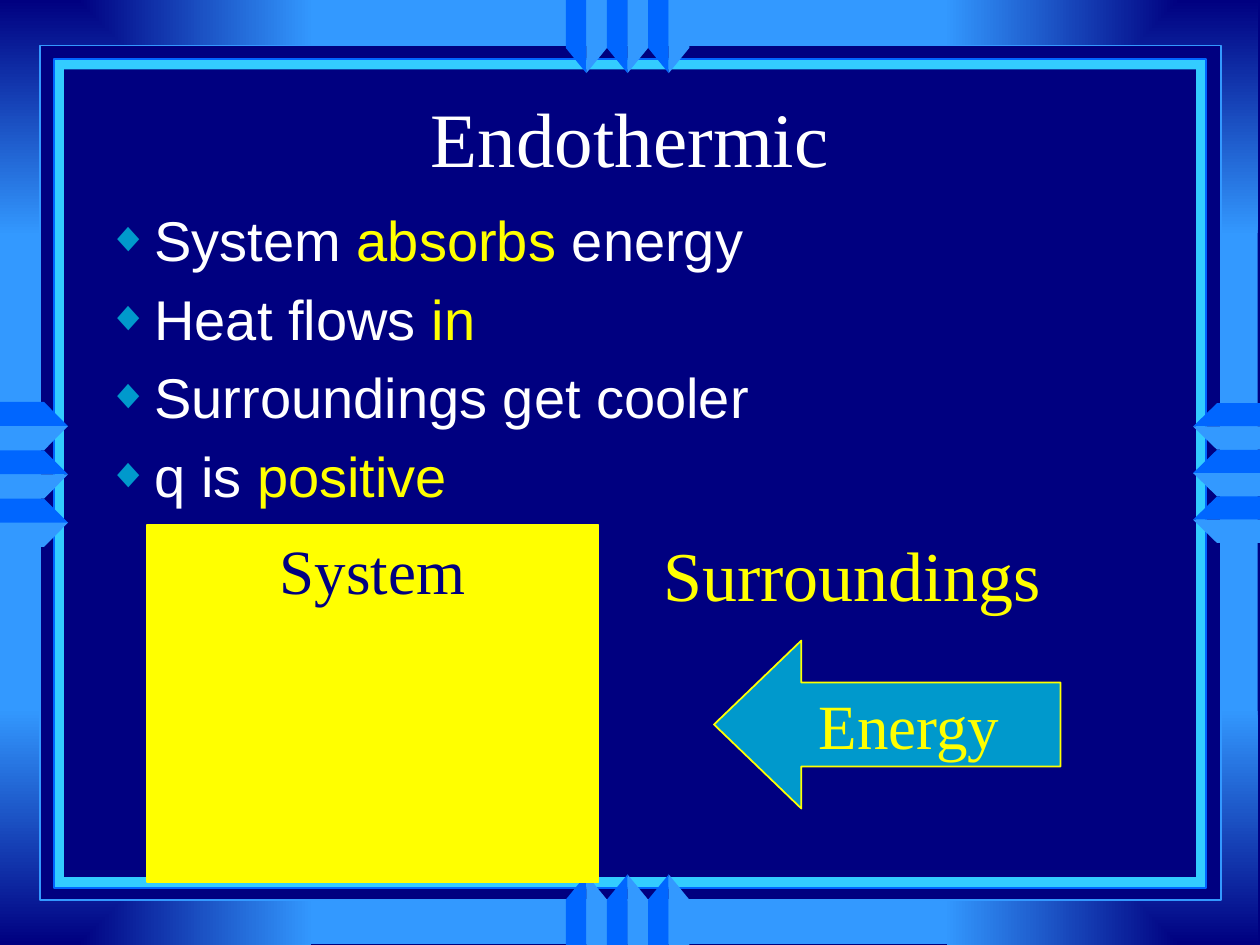
from lxml import etree
from pptx import Presentation
from pptx.dml.color import RGBColor
from pptx.enum.shapes import MSO_SHAPE
from pptx.enum.text import MSO_ANCHOR, MSO_AUTO_SIZE, PP_ALIGN
from pptx.oxml.ns import qn
from pptx.util import Pt

NAVY = RGBColor(0x00, 0x00, 0x80)
SKY = RGBColor(0x33, 0x99, 0xFF)
BLUE = RGBColor(0x00, 0x66, 0xFF)
CYAN = RGBColor(0x33, 0xCC, 0xFF)
TEAL = RGBColor(0x00, 0x99, 0xCC)
YELLOW = RGBColor(0xFF, 0xFF, 0x00)
WHITE = RGBColor(0xFF, 0xFF, 0xFF)

SERIF = "Times New Roman"
SANS = "Arial"

SLIDE_WIDTH, SLIDE_HEIGHT = 720, 540
SLAT_COUNT = 6

BULLETS = [
    [("System", WHITE), (" absorbs ", YELLOW), ("energy", WHITE)],
    [("Heat flows ", WHITE), ("in", YELLOW)],
    [("Surroundings get cooler", WHITE)],
    [("q is ", WHITE), ("positive", YELLOW)],
]


def add_text(paragraph, text, *, size, color, font=SERIF, align=None):
    run = paragraph.add_run()
    run.text = text
    run.font.size = Pt(size)
    run.font.name = font
    run.font.color.rgb = color
    if align is not None:
        paragraph.alignment = align


def paint(shape, fill, line=None):
    shape.shadow.inherit = False
    shape.fill.solid()
    shape.fill.fore_color.rgb = fill
    if line is None:
        shape.line.fill.background()
    else:
        shape.line.color.rgb = line
        shape.line.width = Pt(1)


def add_block(slide, kind, box, fill, line=None):
    shape = slide.shapes.add_shape(kind, *map(Pt, box))
    paint(shape, fill, line)
    return shape


def add_corner_glow(slide, right, bottom):
    box = (360 * right, 270 * bottom, 358.6, 269.6)
    shape = add_block(slide, MSO_SHAPE.RECTANGLE, box, SKY)
    shape.fill.gradient()
    for stop, color in zip(shape.fill.gradient_stops, (NAVY, SKY)):
        stop.color.rgb = color
    linear = next(shape._element.iter(qn("a:lin")))
    path = etree.Element(qn("a:path"), {"path": "rect"})
    etree.SubElement(path, qn("a:fillToRect"), {
        "l": str(100000 * right),
        "t": str(100000 * bottom),
        "r": str(100000 * (1 - right)),
        "b": str(100000 * (1 - bottom)),
    })
    linear.getparent().replace(linear, path)


def add_slats(slide, start, step, base, shoulder, tip, vertical):
    for index in range(SLAT_COUNT):
        near, far = start + step * index, start + step * (index + 1)
        outer, inner = (far, near) if index % 2 else (near, far)
        points = [(outer, base), (outer, shoulder), (inner, tip), (inner, base)]
        if not vertical:
            points = [(y, x) for x, y in points]
        points = [(Pt(x), Pt(y)) for x, y in points]
        builder = slide.shapes.build_freeform(*points[0], scale=1.0)
        builder.add_line_segments(points[1:], close=True)
        paint(builder.convert_to_shape(), SKY if index % 2 else BLUE)


def add_frame(slide):
    for right in (0, 1):
        for bottom in (0, 1):
            add_corner_glow(slide, right, bottom)
    for box, fill, line in (
        ((23, 26, 674.6, 488.2), NAVY, SKY),
        ((31, 33.8, 658, 473.8), CYAN, BLUE),
        ((36.7, 39.6, 646.6, 461.5), NAVY, None),
    ):
        add_block(slide, MSO_SHAPE.RECTANGLE, box, fill, line)
    add_slats(slide, 323.3, 11.76, 0, 27.4, 41.8, True)
    add_slats(slide, 323.3, 11.76, SLIDE_HEIGHT, 514.1, 499.7, True)
    add_slats(slide, 229.7, 13.8, 0, 25.2, 38.9, False)
    add_slats(slide, 230.4, 13.32, SLIDE_WIDTH, 695.5, 681.8, False)


def place_placeholder(slide, placeholder, box, anchor):
    placeholder.left, placeholder.top, placeholder.width, placeholder.height = map(Pt, box)
    slide.shapes._spTree.append(placeholder._element)
    frame = placeholder.text_frame
    frame.auto_size = MSO_AUTO_SIZE.NONE
    frame.vertical_anchor = anchor
    return frame


def add_title(slide, text):
    frame = place_placeholder(slide, slide.shapes.title, (54, 42, 612, 66), MSO_ANCHOR.BOTTOM)
    add_text(frame.paragraphs[0], text, size=44, color=WHITE, align=PP_ALIGN.CENTER)


def set_diamond_bullet(paragraph):
    properties = paragraph._p.get_or_add_pPr()
    properties.set("marL", str(Pt(27)))
    properties.set("indent", str(-Pt(27)))
    color = etree.SubElement(properties, qn("a:buClr"))
    etree.SubElement(color, qn("a:srgbClr"), {"val": str(TEAL)})
    etree.SubElement(properties, qn("a:buSzPct"), {"val": "75000"})
    etree.SubElement(properties, qn("a:buChar"), {"char": "◆"})


def add_bullets(slide, bullets):
    frame = place_placeholder(slide, slide.placeholders[1], (54, 114, 612, 384), MSO_ANCHOR.TOP)
    for index, runs in enumerate(bullets):
        paragraph = frame.add_paragraph() if index else frame.paragraphs[0]
        set_diamond_bullet(paragraph)
        for text, color in runs:
            add_text(paragraph, text, size=32, color=color, font=SANS)


def add_labelled_block(slide, kind, box, fill, text, color, anchor):
    shape = add_block(slide, kind, box, fill, YELLOW)
    frame = shape.text_frame
    frame.word_wrap = False
    frame.vertical_anchor = anchor
    add_text(frame.paragraphs[0], text, size=36, color=color, align=PP_ALIGN.CENTER)
    return shape


def add_label(slide, box, text):
    frame = slide.shapes.add_textbox(*map(Pt, box)).text_frame
    frame.word_wrap = True
    frame.auto_size = MSO_AUTO_SIZE.SHAPE_TO_FIT_TEXT
    add_text(frame.paragraphs[0], text, size=40, color=YELLOW)


def main():
    presentation = Presentation()
    presentation.slide_width = Pt(SLIDE_WIDTH)
    presentation.slide_height = Pt(SLIDE_HEIGHT)
    slide = presentation.slides.add_slide(presentation.slide_layouts[1])
    slide.background.fill.solid()
    slide.background.fill.fore_color.rgb = NAVY

    add_frame(slide)
    add_title(slide, "Endothermic")
    add_bullets(slide, BULLETS)
    add_labelled_block(slide, MSO_SHAPE.RECTANGLE, (84, 300, 258, 204),
                       YELLOW, "System", NAVY, MSO_ANCHOR.TOP)
    add_label(slide, (372, 300, 288, 55.4), "Surroundings")
    arrow = add_labelled_block(slide, MSO_SHAPE.LEFT_ARROW, (408, 366, 198, 96),
                               TEAL, "Energy", YELLOW, MSO_ANCHOR.MIDDLE)
    arrow.adjustments[0] = 0.5
    arrow.adjustments[1] = 0.52
    presentation.save("out.pptx")


if __name__ == "__main__":
    main()
